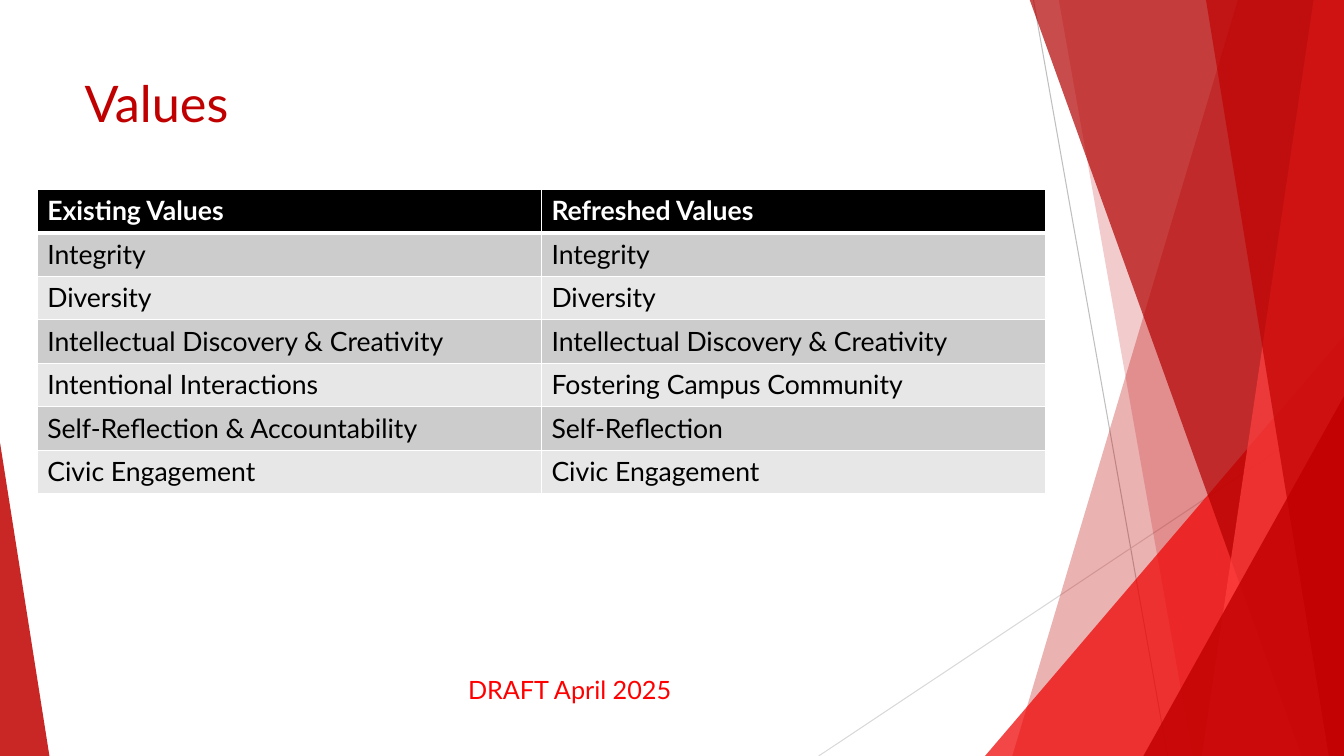
from lxml.etree import SubElement as Sub
from pptx import Presentation
from pptx.dml.color import RGBColor as RGB
from pptx.enum.shapes import MSO_CONNECTOR as Conn, MSO_SHAPE as Kind
from pptx.enum.text import PP_ALIGN as Align
from pptx.oxml.ns import qn
from pptx.util import Inches, Pt

COLORS = {
    "red": "C00000", "deep": "B30000", "bright": "EF0000", "coral": "FF4040",
    "draft": "FF0000", "gray": "BFBFBF", "pale": "D9D9D9",
    "black": "000000", "white": "FFFFFF", "dark": "CCCCCC", "light": "E7E7E7",
}
WIDE, HIGH, TOP = 13.33, 7.5, -0.01

deck = Presentation()
deck.slide_width, deck.slide_height = Inches(WIDE), Inches(HIGH)
slide = deck.slides.add_slide(deck.slide_layouts[6])
shapes = slide.shapes


def paint(shape, color, alpha):
    shape.shadow.inherit = False
    shape.fill.solid()
    shape.fill.fore_color.rgb = RGB.from_string(COLORS[color])
    shape.line.fill.background()
    tint = shape.fill._xPr.find(qn("a:solidFill"))[0]
    Sub(tint, qn("a:alpha"), val=str(alpha * 1000))


def write(frame, text, size, color, bold=False):
    frame.text = text
    font = frame.paragraphs[0].font
    font.name, font.size, font.bold = "Lato", Pt(size), bold
    font.color.rgb = RGB.from_string(COLORS[color])


for x1, y1, x2, y2, color in [
    (10.25, 0, 11.58, HIGH, "gray"),
    (WIDE, 4.03, 8.12, HIGH, "pale"),
]:
    line = shapes.add_connector(
        Conn.STRAIGHT, Inches(x1), Inches(y1), Inches(x2), Inches(y2))
    line.line.width = Pt(0.75)
    line.line.color.rgb = RGB.from_string(COLORS[color])
    Sub(line._element.spPr, qn("a:effectLst"))

for kind, data, color, alpha in [
    ("band", (12.28, 10.04), "red", 30),
    ("band", (10.5, 11.83), "red", 20),
    ("peak", (9.77, 3.33, 3.56, 1), "bright", 72),
    ("band", (10.21, 12.91), "deep", 70),
    ("band", (13.03, 11.92), "coral", 70),
    ("band", (11.96, 13.18), "red", 65),
    ("peak", (11.34, 3.93, 1.99, 1), "red", 80),
    ("peak", (0, 4.39, 0.49, 0), "red", 85),
]:
    if kind == "band":
        head, foot = data
        pen = shapes.build_freeform(Inches(head), Inches(TOP))
        pen.add_line_segments([
            (Inches(x), Inches(y))
            for x, y in [(WIDE, TOP), (WIDE, HIGH), (foot, HIGH)]
        ])
        shape = pen.convert_to_shape()
    else:
        left, top, width, tip = data
        shape = shapes.add_shape(
            Kind.ISOSCELES_TRIANGLE, Inches(left), Inches(top),
            Inches(width), Inches(HIGH - top))
        shape.adjustments[0] = tip
    paint(shape, color, alpha)

title = shapes.add_textbox(
    Inches(0.74), Inches(0.67), Inches(9.4), Inches(1.44)).text_frame
title.word_wrap = True
write(title, "Values", 36, "red")

values = [
    ("Existing Values", "Refreshed Values"),
    ("Integrity", "Integrity"),
    ("Diversity", "Diversity"),
    ("Intellectual Discovery & Creativity", "Intellectual Discovery & Creativity"),
    ("Intentional Interactions", "Fostering Campus Community"),
    ("Self-Reflection & Accountability", "Self-Reflection"),
    ("Civic Engagement", "Civic Engagement"),
]
table = shapes.add_table(
    len(values), 2, Inches(0.37), Inches(1.88), Inches(10), Inches(3.02)).table
for r, row in enumerate(values):
    for c, text in enumerate(row):
        cell = table.cell(r, c)
        cell.margin_left = cell.margin_right = Inches(0.1)
        write(cell.text_frame, text, 19, "black" if r else "white", r == 0)
        for side in "LRTB":
            thick = (r, side) in [(0, "B"), (1, "T")]
            edge = Sub(cell._tc.get_or_add_tcPr(), qn("a:ln" + side),
                       w=str(Pt(3 if thick else 1)))
            Sub(Sub(edge, qn("a:solidFill")), qn("a:srgbClr"), val=COLORS["white"])
        cell.fill.solid()
        shade = "black" if r == 0 else "dark" if r % 2 else "light"
        cell.fill.fore_color.rgb = RGB.from_string(COLORS[shade])

draft = shapes.add_textbox(
    Inches(2.43), Inches(6.64), Inches(6.44), Inches(0.4)).text_frame
draft.word_wrap = True
write(draft, "DRAFT April 2025", 18, "draft")
draft.paragraphs[0].alignment = Align.CENTER

deck.save("out.pptx")
